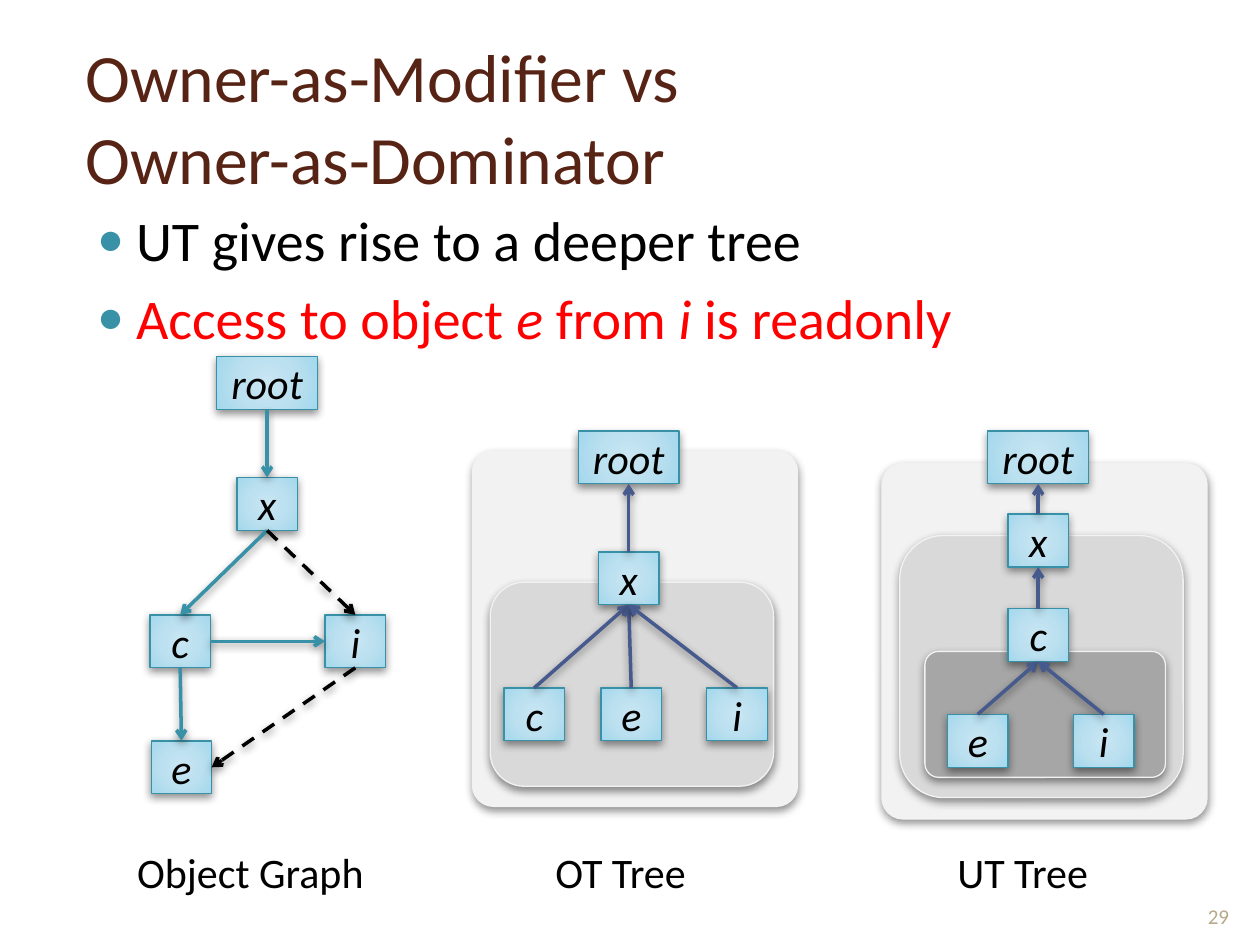
from lxml.etree import SubElement
from pptx import Presentation
from pptx.dml.color import RGBColor
from pptx.enum.dml import MSO_LINE_DASH_STYLE as Dash
from pptx.enum.shapes import MSO_CONNECTOR as Connector, MSO_SHAPE as Shape
from pptx.enum.text import MSO_ANCHOR as Anchor, MSO_AUTO_SIZE as AutoSize, PP_ALIGN as Align
from pptx.oxml.ns import qn
from pptx.util import Inches, Pt

TOP, LEFT, BOTTOM, RIGHT = range(4)
BLACK, RED, TEAL, INDIGO = "000000", "FF0000", "3891A7", "475A8D"


def color(hex_code):
    return RGBColor.from_string(hex_code)


def assign(target, **values):
    for name, value in values.items():
        setattr(target, name, value)


def add_xml(parent, tag, **attributes):
    return SubElement(parent, qn(tag), {k: str(v) for k, v in attributes.items()})


class SlideBuilder:
    font = "Calibri"
    glow_stops = {0: "C9E6F2", 50: "BBE0EF", 97: "A4D8ED", 100: "9BD7EE"}

    def __init__(self, slide):
        self.slide = slide

    def box(self, bounds):
        return [Inches(length) for length in bounds]

    def add_words(self, paragraph, text, size, ink=BLACK, italic=False):
        run = paragraph.add_run()
        run.text = text
        assign(run.font, name=self.font, size=Pt(size), italic=italic)
        run.font.color.rgb = color(ink)

    def place(self, placeholder, bounds, anchor):
        names = ("left", "top", "width", "height")
        assign(placeholder, **dict(zip(names, self.box(bounds))))
        assign(placeholder.text_frame, auto_size=AutoSize.NONE, vertical_anchor=anchor)
        return placeholder.text_frame

    def title(self, lines, bounds):
        paragraph = self.place(self.slide.shapes.title, bounds, Anchor.MIDDLE).paragraphs[0]
        paragraph.alignment = Align.LEFT
        for number, line in enumerate(lines):
            if number:
                paragraph.add_line_break()
            self.add_words(paragraph, line, 38.7, "572314")

    def bullets(self, items, bounds):
        frame = self.place(self.slide.placeholders[1], bounds, Anchor.TOP)
        for number, (ink, parts) in enumerate(items):
            paragraph = frame.add_paragraph() if number else frame.paragraphs[0]
            paragraph.space_before = Pt(6)
            properties = paragraph._p.get_or_add_pPr()
            properties.set("marL", str(Inches(0.4)))
            properties.set("indent", str(Inches(-0.31)))
            add_xml(add_xml(properties, "a:buClr"), "a:srgbClr", val=TEAL)
            add_xml(properties, "a:buSzPct", val=80000)
            add_xml(properties, "a:buChar", char="●")
            for text, italic in parts:
                self.add_words(paragraph, text, 32, ink, italic)

    def text(self, content, bounds, size=24, ink=BLACK, align=Align.LEFT, anchor=Anchor.TOP):
        frame = self.slide.shapes.add_textbox(*self.box(bounds)).text_frame
        assign(frame, word_wrap=True, vertical_anchor=anchor)
        frame.paragraphs[0].alignment = align
        self.add_words(frame.paragraphs[0], content, size, ink)

    def shadow(self, effects):
        shade = add_xml(effects, "a:outerShdw", blurRad=Pt(5), dist=Pt(2),
                        dir=5400000, rotWithShape=0)
        add_xml(add_xml(shade, "a:srgbClr", val=BLACK), "a:alpha", val=43000)

    def shape(self, kind, bounds, fill, edge):
        shape = self.slide.shapes.add_shape(kind, *self.box(bounds))
        shape.fill.solid()
        shape.fill.fore_color.rgb = color(fill)
        shape.line.color.rgb = color(edge)
        shape.line.width = Pt(0.75)
        shape.shadow.inherit = False
        self.shadow(shape._element.spPr.find(qn("a:effectLst")))
        return shape

    def panel(self, bounds, fill, rounding):
        panel = self.shape(Shape.ROUNDED_RECTANGLE, bounds, fill, "F2F2F2")
        panel.adjustments[0] = rounding

    def node(self, label, center, top):
        width = 0.8 if label == "root" else 0.48
        node = self.shape(Shape.RECTANGLE, (center - width / 2, top, width, 0.42), "BBE0EF", TEAL)
        properties = node._element.spPr
        solid = properties.find(qn("a:solidFill"))
        gradient = add_xml(properties, "a:gradFill", rotWithShape=1)
        stops = add_xml(gradient, "a:gsLst")
        for position, shade in self.glow_stops.items():
            add_xml(add_xml(stops, "a:gs", pos=position * 1000), "a:srgbClr", val=shade)
        add_xml(add_xml(gradient, "a:path", path="circle"), "a:fillToRect",
                l=50000, t=50000, r=50000, b=50000)
        properties.replace(solid, gradient)
        frame = node.text_frame
        assign(frame, word_wrap=False, vertical_anchor=Anchor.MIDDLE)
        frame.paragraphs[0].alignment = Align.CENTER
        self.add_words(frame.paragraphs[0], label, 24, italic=True)
        return node

    def arrow(self, start, end, sides=(BOTTOM, TOP), ink=TEAL, dash=None, tip="a:tailEnd"):
        arrow = self.slide.shapes.add_connector(Connector.STRAIGHT, 0, 0, 0, 0)
        arrow.begin_connect(start, sides[0])
        arrow.end_connect(end, sides[1])
        arrow.line.color.rgb = color(ink)
        assign(arrow.line, width=Pt(2), dash_style=dash)
        properties = arrow._element.spPr
        add_xml(properties.find(qn("a:ln")), tip, type="arrow")
        self.shadow(add_xml(properties, "a:effectLst"))

    def nodes(self, places):
        return {label: self.node(label, *place) for label, place in places.items()}

    def tree(self, panels, places, edges):
        for panel in panels:
            self.panel(*panel)
        nodes = self.nodes(places)
        for owner, owned in edges:
            self.arrow(nodes[owner], nodes[owned], ink=INDIGO, tip="a:headEnd")


def main():
    deck = Presentation()
    assign(deck, slide_width=Inches(10), slide_height=Inches(7.5))
    builder = SlideBuilder(deck.slides.add_slide(deck.slide_layouts[1]))

    builder.title(["Owner-as-Modifier vs ", "Owner-as-Dominator"], (0.58, 0.3, 8.87, 1.25))
    builder.bullets([
        (BLACK, [("UT gives rise to a deeper tree", False)]),
        (RED, [("Access to object ", False), ("e", True), (" from ", False),
               ("i ", True), ("is readonly", False)]),
    ], (0.58, 1.58, 8.87, 5.25))

    builder.tree(
        [((3.75, 3.58, 2.58, 2.82), "F2F2F2", 0.065),
         ((3.89, 4.62, 2.25, 1.62), "D9D9D9", 0.167)],
        {"root": (4.99, 3.42), "x": (4.99, 4.38),
         "c": (4.24, 5.46), "e": (5.01, 5.46), "i": (5.85, 5.46)},
        [("root", "x"), ("x", "c"), ("x", "e"), ("x", "i")])
    builder.tree(
        [((7, 3.68, 2.58, 2.82), "F2F2F2", 0.065),
         ((7.14, 4.25, 2.25, 2.08), "D9D9D9", 0.167),
         ((7.34, 5.17, 1.91, 1), "A6A6A6", 0.11)],
        {"root": (8.24, 3.42), "x": (8.24, 4.08), "c": (8.24, 4.83),
         "e": (7.76, 5.67), "i": (8.76, 5.67)},
        [("root", "x"), ("x", "c"), ("c", "e"), ("c", "i")])

    graph = builder.nodes({"root": (2.12, 2.83), "x": (2.12, 3.79), "i": (2.82, 4.88),
                           "c": (1.43, 4.88), "e": (1.44, 5.88)})
    for start, end in [("root", "x"), ("x", "c"), ("c", "e")]:
        builder.arrow(graph[start], graph[end])
    builder.arrow(graph["c"], graph["i"], (RIGHT, LEFT))
    for start, end, side in [("x", "i", TOP), ("i", "e", RIGHT)]:
        builder.arrow(graph[start], graph[end], (BOTTOM, side), BLACK, Dash.DASH)

    for caption, left, width in [("Object Graph", 0.99, 2.1), ("OT Tree", 4.31, 1.44),
                                 ("UT Tree", 7.5, 1.5)]:
        builder.text(caption, (left, 6.67, width, 0.5))
    builder.text("29", (9.42, 6.9, 0.5, 0.52), 12, "B6A98A", Align.CENTER, Anchor.BOTTOM)
    deck.save("out.pptx")


if __name__ == "__main__":
    main()
